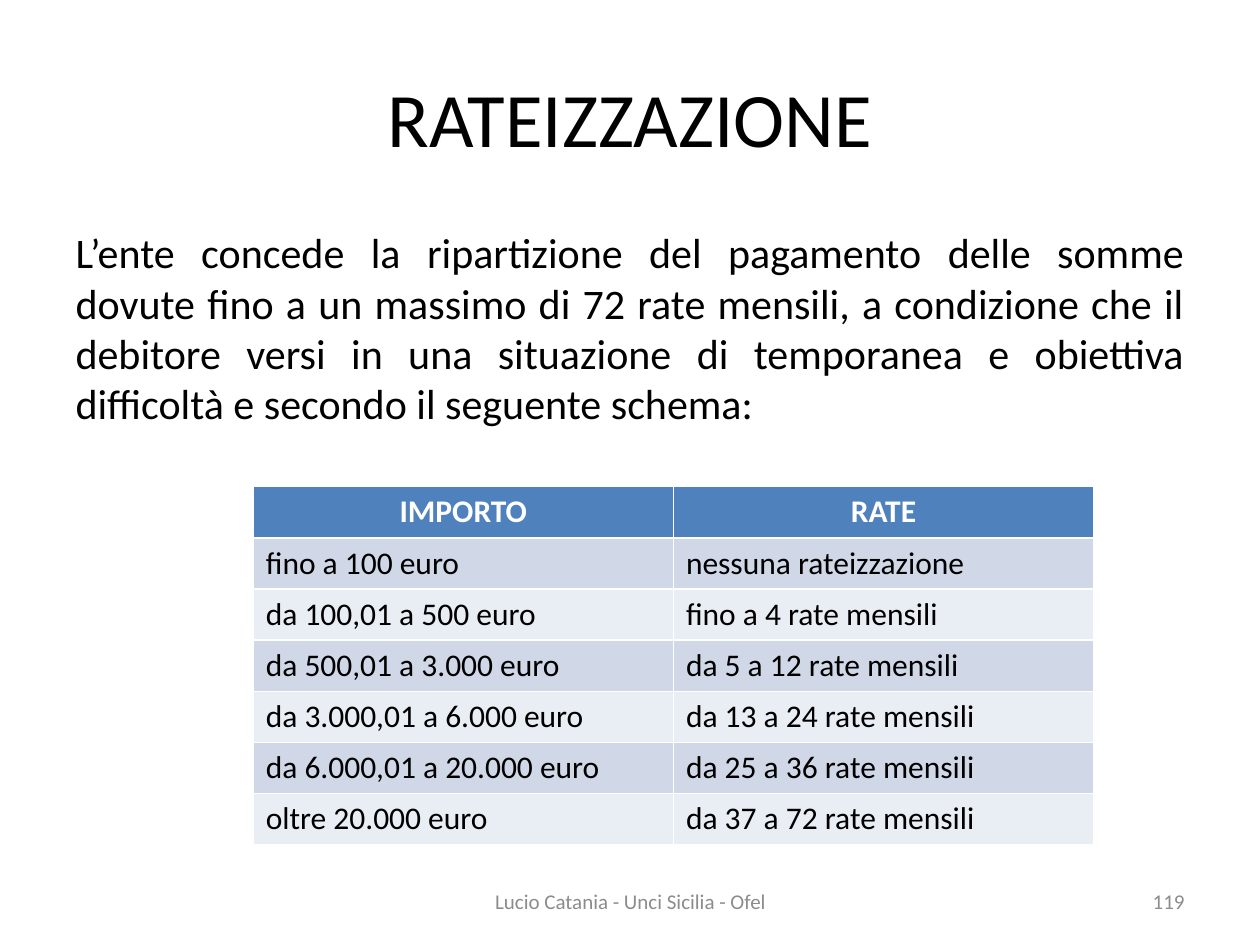
"""Builds the RATEIZZAZIONE slide with its instalment table."""
from lxml import etree
from pptx import Presentation
from pptx.dml.color import RGBColor
from pptx.enum.text import MSO_ANCHOR, PP_ALIGN
from pptx.oxml.ns import qn
from pptx.util import Inches, Pt

LEFT, CENTER, RIGHT, JUSTIFY = PP_ALIGN.LEFT, PP_ALIGN.CENTER, PP_ALIGN.RIGHT, PP_ALIGN.JUSTIFY
MIDDLE = MSO_ANCHOR.MIDDLE
WIDTH, HEIGHT = 10, 7.5
BLACK, WHITE, GREY = "000000", "FFFFFF", "8C8C8C"
HEADER_FILL, BAND_FILLS = "4F81BD", ("D0D8E8", "E9EDF4")

INTRO = (
    "L’ente concede la ripartizione del pagamento delle somme dovute fino a un massimo "
    "di 72 rate mensili, a condizione che il debitore versi in una situazione di "
    "temporanea e obiettiva difficoltà e secondo il seguente schema:"
)
SCHEDULE = [
    ("IMPORTO", "RATE"),
    ("fino a 100 euro", "nessuna rateizzazione"),
    ("da 100,01 a 500 euro", "fino a 4 rate mensili"),
    ("da 500,01 a 3.000 euro", "da 5 a 12 rate mensili"),
    ("da 3.000,01 a 6.000 euro", "da 13 a 24 rate mensili"),
    ("da 6.000,01 a 20.000 euro", "da 25 a 36 rate mensili"),
    ("oltre 20.000 euro", "da 37 a 72 rate mensili"),
]


def color(hex_value):
    return RGBColor.from_string(hex_value)


class SlideBuilder:
    """Holds the font and the current slide; boxes are percentages of the slide's size."""

    def __init__(self, slide, font="Calibri"):
        self.slide = slide
        self.font = font

    def box(self, left, top, width, height):
        return (Inches(left * WIDTH / 100), Inches(top * HEIGHT / 100),
                Inches(width * WIDTH / 100), Inches(height * HEIGHT / 100))

    def set_text(self, frame, text, size, ink, align, bold=False):
        frame.text = text
        frame.word_wrap = True
        paragraph = frame.paragraphs[0]
        paragraph.alignment = align
        paragraph.font.name = self.font
        paragraph.font.size = Pt(size)
        paragraph.font.bold = bold
        paragraph.font.color.rgb = color(ink)
        return paragraph

    def fill_placeholder(self, index, box, text, size, align):
        holder = self.slide.placeholders[index]
        holder.left, holder.top, holder.width, holder.height = self.box(*box)
        return self.set_text(holder.text_frame, text, size, BLACK, align)

    def title(self, box, text):
        self.fill_placeholder(0, box, text, 44, CENTER)

    def body(self, box, text):
        properties = self.fill_placeholder(1, box, text, 24, JUSTIFY)._p.get_or_add_pPr()
        properties.set("marL", "0")
        properties.set("indent", "0")
        bullet = etree.Element(qn("a:buNone"))
        properties.insert_element_before(bullet, "a:tabLst", "a:defRPr", "a:extLst")

    def footer(self, box, text, align):
        frame = self.slide.shapes.add_textbox(*self.box(*box)).text_frame
        frame.vertical_anchor = MIDDLE
        self.set_text(frame, text, 12, GREY, align)

    def table(self, box, rows):
        table = self.slide.shapes.add_table(len(rows), len(rows[0]), *self.box(*box)).table
        for row_index, row in enumerate(rows):
            header = row_index == 0
            fill = HEADER_FILL if header else BAND_FILLS[(row_index - 1) % 2]
            ink, align = (WHITE, CENTER) if header else (BLACK, LEFT)
            for column_index, text in enumerate(row):
                cell = table.cell(row_index, column_index)
                cell.fill.solid()
                cell.fill.fore_color.rgb = color(fill)
                self.set_text(cell.text_frame, text, 18, ink, align, bold=header)


def main():
    presentation = Presentation()
    presentation.slide_width, presentation.slide_height = Inches(WIDTH), Inches(HEIGHT)
    builder = SlideBuilder(presentation.slides.add_slide(presentation.slide_layouts[1]))
    builder.title((5, 4, 90, 16.67), "RATEIZZAZIONE")
    builder.body((5, 23.33, 90, 66), INTRO)
    builder.footer((34.2, 92.7, 31.7, 5.3), "Lucio Catania - Unci Sicilia - Ofel", CENTER)
    builder.table((20.1, 51.5, 66.7, 37.9), SCHEDULE)
    builder.footer((71.7, 92.7, 23.3, 5.3), "119", RIGHT)
    presentation.save("out.pptx")


if __name__ == "__main__":
    main()
